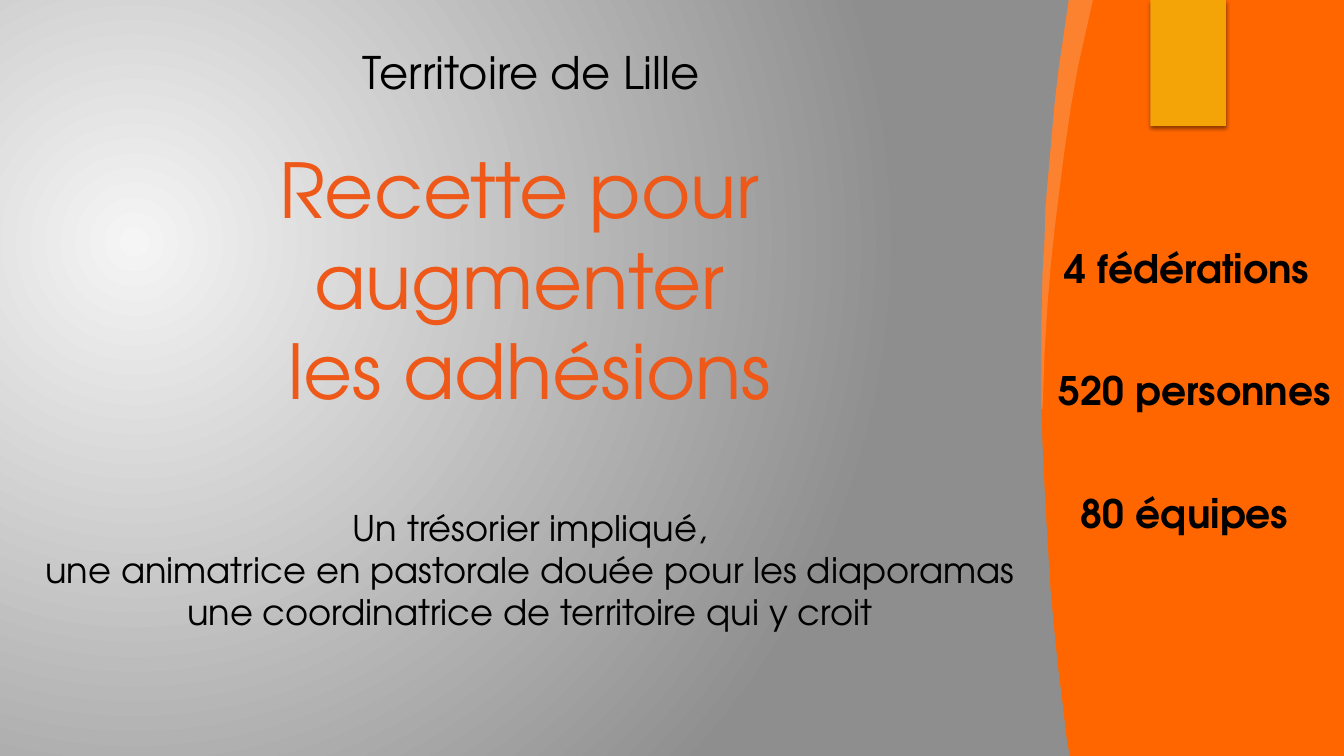
from lxml import etree
from pptx import Presentation
from pptx.dml.color import RGBColor
from pptx.enum.shapes import MSO_SHAPE as Shape
from pptx.enum.text import MSO_ANCHOR as Anchor, MSO_AUTO_SIZE as AutoSize, PP_ALIGN as Align
from pptx.oxml import parse_xml
from pptx.oxml.ns import nsdecls, qn
from pptx.util import Inches, Pt

HEADING = "Territoire de Lille"
# \v is a line break inside a paragraph
TITLE = "Recette pour \vaugmenter \vles adhésions"
TEAM = ("Un trésorier impliqué,\v"
        "une animatrice en pastorale douée pour les diaporamas\v"
        "une coordinatrice de territoire qui y croit")
FIGURES = [("4 fédérations", 0.49), ("520 personnes", 0.43), ("80 équipes", 0.65)]  # text, indent

FONT = "TeX Gyre Adventor"
COLORS = {"orange": "FF6600", "title": "EE5818", "text": "000000", "tab": "F5A408",
          "highlight": "F3F3F3", "centre": "F5F5F5", "rim": "8E8E8E"}
WIDTH, HEIGHT = 13.33, 7.5

PANEL_EDGE = [(10.6, 0), (10.55, 0.34), (10.5, 0.68), (10.46, 1.02), (10.43, 1.36),
              (10.4, 1.7), (10.37, 2.04), (10.36, 2.37), (10.34, 2.7), (10.33, 3.18),
              (10.33, 4.11), (10.34, 4.41), (10.36, 4.84), (10.39, 5.37), (10.42, 5.86),
              (10.46, 6.29), (10.5, 6.67), (10.54, 6.99), (10.58, 7.33), (10.61, 7.5)]
PANEL = [(0, 0), *PANEL_EDGE, (0, HEIGHT)]
HIGHLIGHT = [(10.84, 0), (10.32, 0), (10.31, 0.18), (10.25, 1.14), (10.23, 2.27),
             (10.23, 3.3), (10.27, 4.02), (10.34, 4.06), (10.36, 3.5), (10.39, 3.02),
             (10.42, 2.65), (10.46, 2.27), (10.51, 1.87), (10.56, 1.48), (10.62, 1.07),
             (10.69, 0.67), (10.75, 0.4)]


def color(name):
    return RGBColor.from_string(COLORS[name])


def place(shape, left, top, width, height):
    shape.left, shape.top = Inches(left), Inches(top)
    shape.width, shape.height = Inches(width), Inches(height)


def paint(shape, name):
    """Solid fill, no outline, no shadow."""
    shape.shadow.inherit = False
    shape.fill.solid()
    shape.fill.fore_color.rgb = color(name)
    shape.line.fill.background()


def add_outline(slide, points):
    start, *others = [(Inches(x), Inches(y)) for x, y in points]
    builder = slide.shapes.build_freeform(*start)
    builder.add_line_segments(others, close=True)
    return builder.convert_to_shape()


def style(paragraph, size, name="text", bold=False):
    for run in paragraph.runs:
        run.font.name, run.font.size, run.font.bold = FONT, Pt(size), bold
        run.font.color.rgb = color(name)


def set_background(slide):
    """Radial gradient centred in the left part of the slide."""
    fill = slide.background.fill
    fill.gradient()
    for stop, name in zip(fill.gradient_stops, ("centre", "rim")):
        stop.color.rgb = color(name)
    linear = next(slide.element.iter(qn("a:lin")))
    linear.getparent().replace(linear, parse_xml(
        f'<a:path {nsdecls("a")} path="circle">'
        '<a:fillToRect l="45000" t="65000" r="125000" b="100000"/></a:path>'))


def add_decor(slide):
    backdrop = slide.shapes.add_shape(Shape.RECTANGLE, 0, 0, Inches(WIDTH), Inches(HEIGHT))
    paint(backdrop, "orange")

    highlight = add_outline(slide, HIGHLIGHT)
    paint(highlight, "highlight")
    tint = next(highlight.element.spPr.iter(qn("a:srgbClr")))
    etree.SubElement(tint, qn("a:alpha"), val="20000")

    # The panel shows the slide background through the orange backdrop
    panel = add_outline(slide, PANEL)
    panel.shadow.inherit = False
    panel.line.fill.background()
    panel.element.remove(panel.element.find(qn("p:style")))
    panel.element.set("useBgFill", "1")

    tab = slide.shapes.add_shape(Shape.RECTANGLE, Inches(11.41), 0, Inches(0.75), Inches(1.25))
    paint(tab, "tab")
    tab.element.spPr.find(qn("a:effectLst")).append(parse_xml(
        f'<a:outerShdw {nsdecls("a")} blurRad="{Pt(3)}" dist="{Pt(2)}" dir="5400000" '
        'rotWithShape="0"><a:srgbClr val="000000"><a:alpha val="45000"/></a:srgbClr>'
        '</a:outerShdw>'))


def fill_figures(placeholder):
    place(placeholder, 9.97, 2.31, 3.52, 3.51)
    frame = placeholder.text_frame
    frame.text = "\n".join(text for text, _ in FIGURES)
    frame.auto_size, frame.vertical_anchor = AutoSize.NONE, Anchor.TOP
    frame.margin_top = Inches(0.11)
    for index, (paragraph, (_, indent)) in enumerate(zip(frame.paragraphs, FIGURES)):
        paragraph.alignment = Align.LEFT
        paragraph.space_before = Pt(54 if index else 0)
        properties = paragraph._p.get_or_add_pPr()
        properties.set("marL", str(Inches(indent)))
        properties.set("indent", "0")
        style(paragraph, 28, bold=True)


def fill_title(placeholder):
    place(placeholder, 0.14, 2.69, 10.23, 3.64)
    frame = placeholder.text_frame
    frame.text = f"{TITLE}\n{TEAM}"
    frame.auto_size, frame.vertical_anchor = AutoSize.NONE, Anchor.BOTTOM
    title, team = frame.paragraphs
    title.alignment = team.alignment = Align.CENTER
    title.space_before, team.space_before = Pt(0), Pt(65)
    style(title, 54, "title")
    style(team, 25.2)


def add_heading(slide):
    box = slide.shapes.add_textbox(Inches(3.5), Inches(0.39), Inches(3.6), Inches(0.64))
    box.text_frame.text = HEADING
    box.text_frame.word_wrap = False
    box.text_frame.auto_size = AutoSize.SHAPE_TO_FIT_TEXT
    style(box.text_frame.paragraphs[0], 32)


def main():
    presentation = Presentation()
    presentation.slide_width, presentation.slide_height = Inches(WIDTH), Inches(HEIGHT)
    slide = presentation.slides.add_slide(presentation.slide_layouts[0])
    title, figures = slide.shapes.title, slide.placeholders[1]
    set_background(slide)
    add_decor(slide)
    fill_figures(figures)
    fill_title(title)
    # Bring the placeholders in front of the decor
    for placeholder in (figures, title):
        slide.shapes._spTree.append(placeholder.element)
    add_heading(slide)
    presentation.save("out.pptx")


if __name__ == "__main__":
    main()
